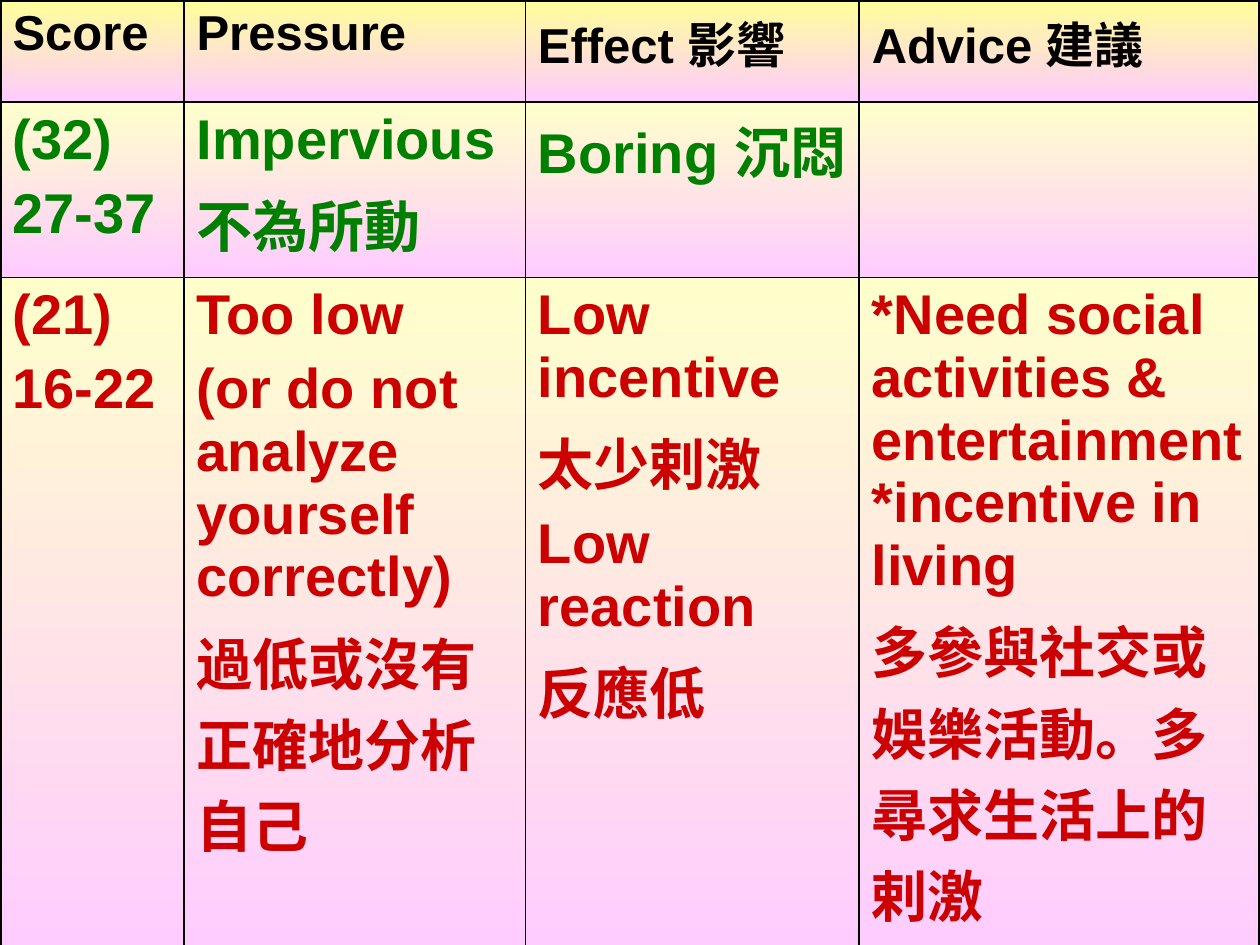
"""Build a one-slide table of pressure scores, effects and advice."""
import pptx
import pptx.dml.color
import pptx.oxml
import pptx.oxml.ns
import pptx.util

Cm, Pt = pptx.util.Cm, pptx.util.Pt
HUES = {"black": "000000", "green": "008000", "red": "CC0000",
        "gold": "FFFF99", "cream": "FFFFCC", "pink": "FFCCFF"}
FONTS = ("Arial", "Times New Roman")
COLS = (3.71, 6.88, 6.73, 8.08)
ROWS = (2.06, 3.33, 13.66)
STYLES = (("black", 28, "gold"), ("green", 32, "cream"), ("red", 32, "cream"))
CELLS = (
    (["Score"], ["Pressure"], ["Effect 影響"], ["Advice 建議"]),
    (["(32)", "27-37"], ["Impervious", "不為所動"], ["Boring |沉悶"], []),
    (["(21)", "16-22"],
     ["Too low", "(or do not analyze yourself correctly)",
      "過低或沒有正確地分析自己"],
     ["Low incentive", "太少剌激", "Low reaction", "反應低"],
     ["*Need social activities & entertainment *incentive in living",
      "多參與社交或娛樂活動。多尋求生活上的剌激"]),
)


def color(name):
    """Return the named colour."""
    return pptx.dml.color.RGBColor.from_string(HUES[name])


def shade(cell, top):
    """Fill a cell from the given colour down to pink."""
    cell.fill.gradient()
    cell.fill.gradient_angle = 270
    for stop, name in zip(cell.fill.gradient_stops, (top, "pink")):
        stop.color.rgb = color(name)


def border(cell, row, col):
    """Draw thin inner lines and thick lines on the table's rim."""
    rim = {"L": col == 0, "R": col == len(COLS) - 1,
           "T": row == 0, "B": row == len(ROWS) - 1}
    props = cell._tc.get_or_add_tcPr()
    for spot, (side, edge) in enumerate(rim.items()):
        width = Pt(2.25 if edge else 1)
        props.insert(spot, pptx.oxml.parse_xml(
            f'<a:ln{side} {pptx.oxml.ns.nsdecls("a")} w="{width}"><a:solidFill>'
            f'<a:srgbClr val="{HUES["black"]}"/></a:solidFill></a:ln{side}>'))


def write(cell, lines, hue, size):
    """Write bold paragraphs; a bar in a line starts the second font."""
    frame = cell.text_frame
    frame.text = "\n".join(line.split("|")[0] for line in lines)
    for para, line in zip(frame.paragraphs, lines):
        para.space_before = Pt(size * 0.2)
        for rest in line.split("|")[1:]:
            para.add_run().text = rest
        for run, face in zip(para.runs, FONTS):
            run.font.name = face
            run.font.size = Pt(size)
            run.font.bold = True
            run.font.color.rgb = color(hue)


def grid(slide):
    """Add the full-slide table with its column and row sizes."""
    table = slide.shapes.add_table(len(ROWS), len(COLS), Cm(0), Cm(0),
                                   Cm(25.4), Cm(19.05)).table
    table.first_row = table.horz_banding = False
    for col, width in zip(table.columns, COLS):
        col.width = Cm(width)
    for row, height in zip(table.rows, ROWS):
        row.height = Cm(height)
    return table


def main():
    """Build and save the slide."""
    deck = pptx.Presentation()
    deck.slide_width, deck.slide_height = Cm(25.4), Cm(19.05)
    table = grid(deck.slides.add_slide(deck.slide_layouts[6]))
    for row, (texts, (hue, size, top)) in enumerate(zip(CELLS, STYLES)):
        for col, lines in enumerate(texts):
            cell = table.cell(row, col)
            shade(cell, top)
            border(cell, row, col)
            write(cell, lines, hue, size)
    deck.save("out.pptx")


if __name__ == "__main__":
    main()
